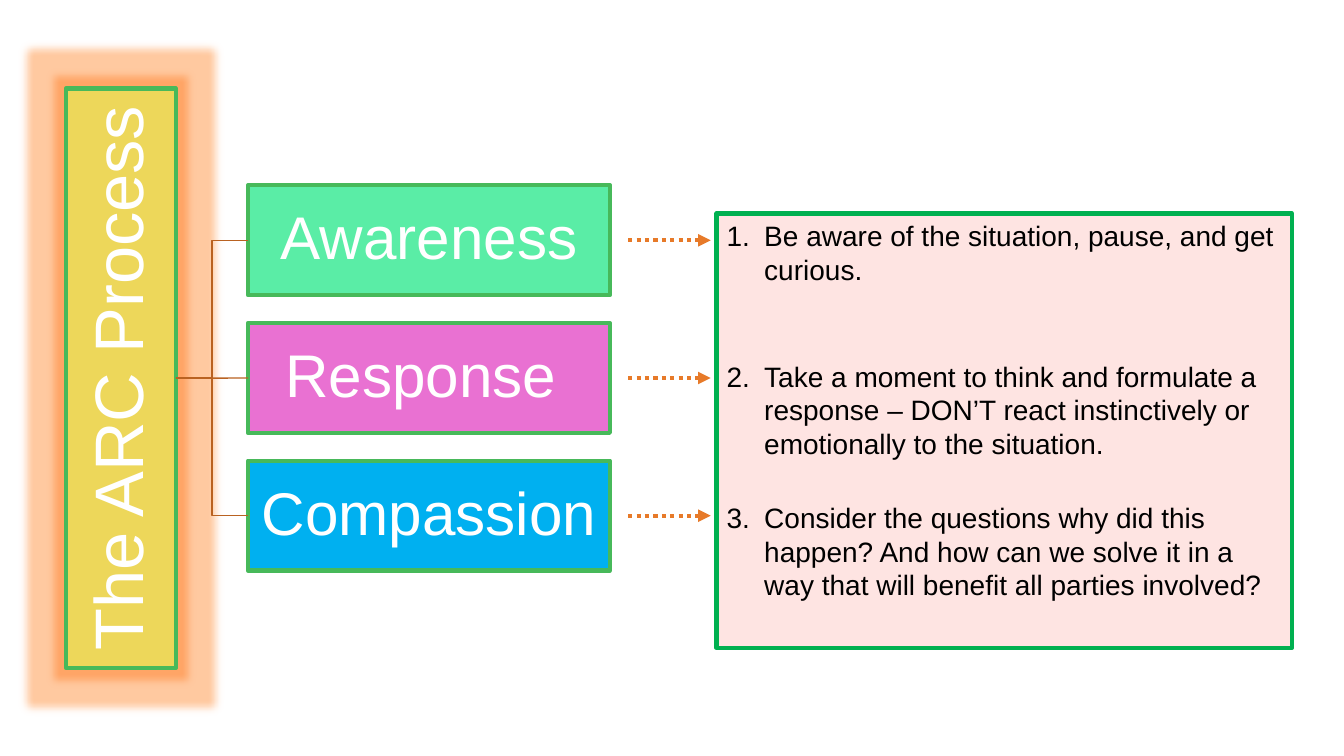
import pptx
import pptx.util
import pptx.dml.color
import pptx.enum.dml
import pptx.enum.shapes
import pptx.enum.text
import pptx.oxml
import pptx.oxml.ns
import lxml.etree

Cm, Pt = pptx.util.Cm, pptx.util.Pt
qn = pptx.oxml.ns.qn

# Content
TITLE = "The ARC Process"
STEPS = [("Awareness", "mint"), ("Response ", "pink"), ("Compassion", "blue")]
ADVICE = [  # text, space before in points
    ("Be aware of the situation, pause, and get curious.", 0),
    ("Take a moment to think and formulate a response – DON’T react "
     "instinctively or emotionally to the situation.", 52.5),
    ("Consider the questions why did this happen? And how can we solve it "
     "in a way that will benefit all parties involved?", 29),
]
COLORS = {
    "white": "FFFFFF", "black": "000000", "yellow": "EDD75A", "mint": "5AEDA6",
    "pink": "E971D2", "blue": "00B0F0", "leaf": "47B95A", "green": "00B050",
    "blush": "FEE4E2", "brown": "B96221", "orange": "E77A29",
    "halo_outer": "FFC9A0", "halo_inner": "FFA566",
}
FONT = "Arial"

# Layout in centimetres
BAR = (1.66, 2.23, 2.77, 14.6)  # as seen, after turning
HALOS = [("halo_outer", 1.3), ("halo_inner", 0.6)]  # colour, reach past bar
HALO_BLUR = 0.25
STEP_LEFT, STEP_TOP, STEP_W, STEP_H, STEP_PITCH = 6.25, 4.67, 9.12, 2.77, 3.47
ARROW_LEFT, ARROW_RIGHT = 15.83, 17.91
PANEL = (18.06, 5.38, 14.5, 10.95)


def color(name):
    return pptx.dml.color.RGBColor.from_string(COLORS[name])


def paint(shape, fill, line=None):
    shape.fill.solid()
    shape.fill.fore_color.rgb = color(fill)
    if line:
        shape.line.color.rgb = color(line)
        shape.line.width = Pt(3)
    else:
        shape.line.fill.background()


def add_box(s, place, fill, line=None):
    box = s.shapes.add_shape(pptx.enum.shapes.MSO_SHAPE.RECTANGLE,
                             *[Cm(v) for v in place])
    box.shadow.inherit = False
    paint(box, fill, line)
    return box


def style_run(p, size, ink):
    for r in p.runs:
        r.font.name, r.font.size = FONT, Pt(size)
        r.font.color.rgb = color(ink)


def set_label(shape, text, size):
    tf = shape.text_frame
    tf.text = text
    tf.word_wrap = True
    tf.auto_size = pptx.enum.text.MSO_AUTO_SIZE.NONE
    tf.vertical_anchor = pptx.enum.text.MSO_ANCHOR.MIDDLE
    tf.margin_left = tf.margin_right = tf.margin_top = tf.margin_bottom = Cm(0.08)
    p = tf.paragraphs[0]
    p.alignment = pptx.enum.text.PP_ALIGN.CENTER
    p.line_spacing = 0.9
    style_run(p, size, "white")


def add_line(s, kind, ends, ink, width):
    c = s.shapes.add_connector(kind, *[Cm(v) for v in ends])
    c.line.color.rgb = color(ink)
    c.line.width = Pt(width)
    lxml.etree.SubElement(c._element.spPr, qn("a:effectLst"))
    return c


def main():
    prs = pptx.Presentation()
    prs.slide_width, prs.slide_height = Cm(33.87), Cm(19.05)
    s = prs.slides.add_slide(prs.slide_layouts[5])
    connector = pptx.enum.shapes.MSO_CONNECTOR
    left, top, width, height = BAR
    center_x, center_y = left + width / 2, top + height / 2

    # Soft halos behind the title bar
    for name, reach in HALOS:
        halo = add_box(s, (left - reach, top - reach,
                           width + 2 * reach, height + 2 * reach), name)
        effects = halo._element.spPr.find(qn("a:effectLst"))
        lxml.etree.SubElement(effects, qn("a:softEdge"), rad=str(int(Cm(HALO_BLUR))))

    # Title bar: laid out flat, then turned about its centre to read upwards
    title = s.shapes.title
    title.left, title.top = Cm(center_x - height / 2), Cm(center_y - width / 2)
    title.width, title.height = Cm(height), Cm(width)
    title.rotation = 270
    paint(title, "yellow", "leaf")
    set_label(title, TITLE, 49)
    s.shapes._spTree.append(title._element)

    # Steps, each with its branch from the title and its arrow
    for i, (text, fill) in enumerate(STEPS):
        y = STEP_TOP + i * STEP_PITCH
        middle = y + STEP_H / 2
        step = add_box(s, (STEP_LEFT, y, STEP_W, STEP_H), fill, "leaf")
        set_label(step, text, 43)

        straight = i == 1
        kind = connector.STRAIGHT if straight else connector.ELBOW
        branch = add_line(s, kind, (left + width, center_y, STEP_LEFT, middle),
                          "brown", 1)
        branch.end_connect(step, 1)
        if straight:
            # The turned bar's bottom side faces right
            branch.begin_connect(title, 2)
            branch.begin_x, branch.begin_y = Cm(left + width), Cm(center_y)

        arrow = add_line(s, connector.STRAIGHT,
                         (ARROW_LEFT, middle, ARROW_RIGHT, middle), "orange", 3)
        arrow.line.dash_style = pptx.enum.dml.MSO_LINE.ROUND_DOT
        lxml.etree.SubElement(arrow.line._get_or_add_ln(), qn("a:tailEnd"),
                              type="triangle")

    # Numbered advice
    panel = add_box(s, PANEL, "blush", "green")
    tf = panel.text_frame
    tf.word_wrap = True
    tf.vertical_anchor = pptx.enum.text.MSO_ANCHOR.TOP
    for i, (text, gap) in enumerate(ADVICE):
        p = tf.add_paragraph() if i else tf.paragraphs[0]
        p.text = text
        p.alignment = pptx.enum.text.PP_ALIGN.LEFT
        p.space_before = Pt(gap)
        style_run(p, 20, "black")
        pPr = p._p.get_or_add_pPr()
        pPr.set("marL", str(int(Cm(0.95))))
        pPr.set("indent", str(int(Cm(-0.95))))
        lxml.etree.SubElement(pPr, qn("a:buFont"), typeface=FONT)
        lxml.etree.SubElement(pPr, qn("a:buAutoNum"), type="arabicPeriod")

    prs.save("out.pptx")


if __name__ == "__main__":
    main()
